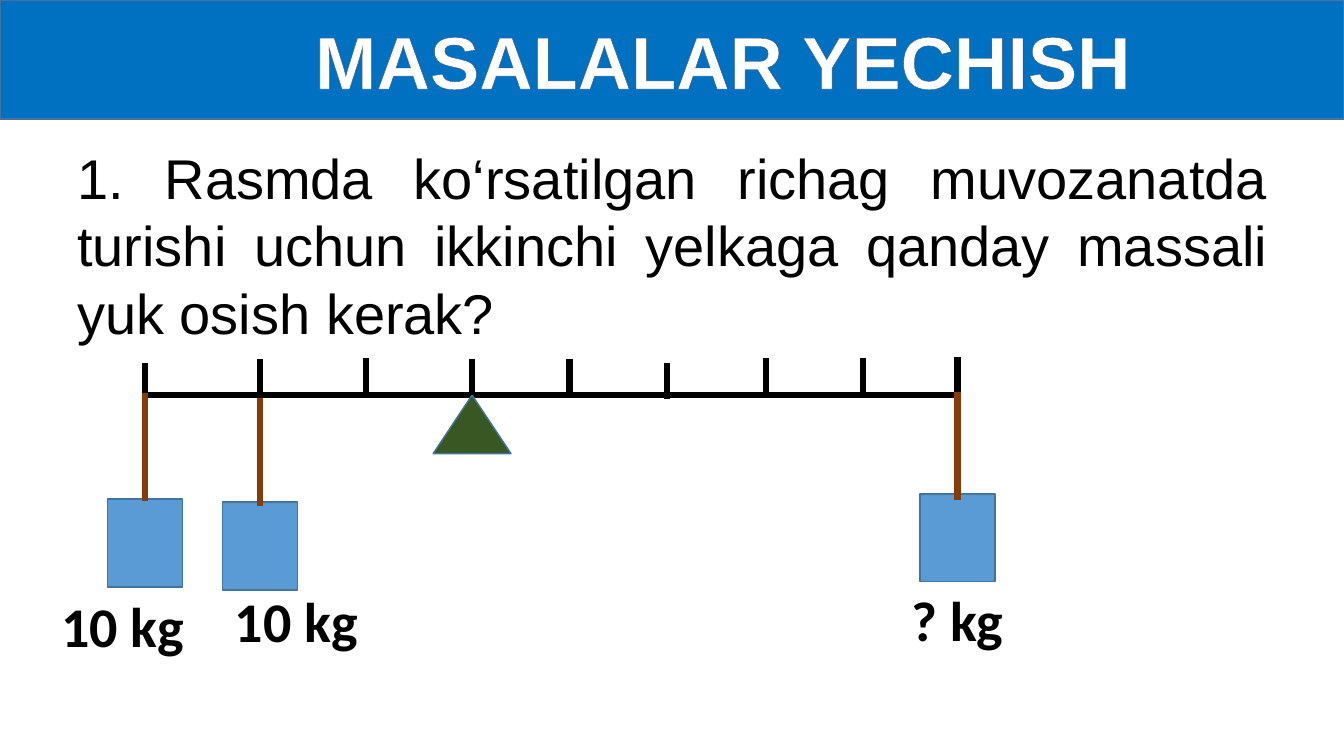
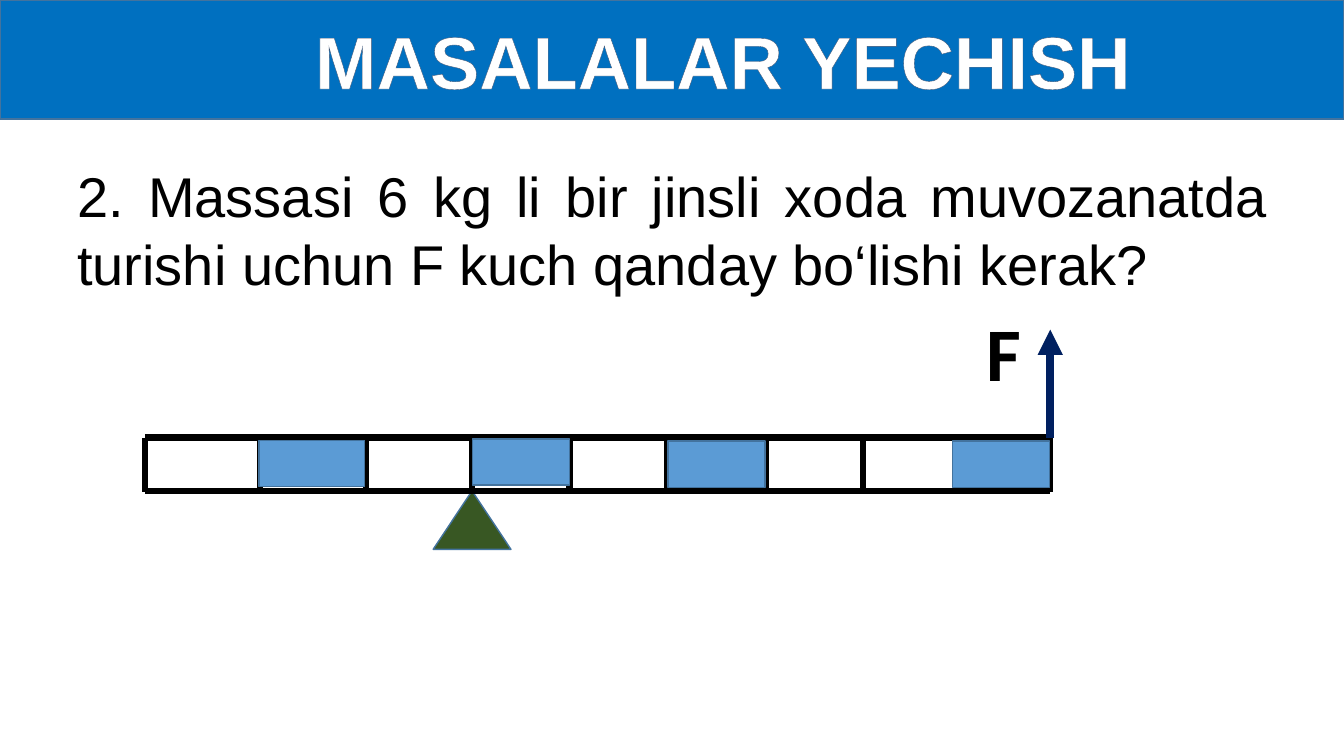
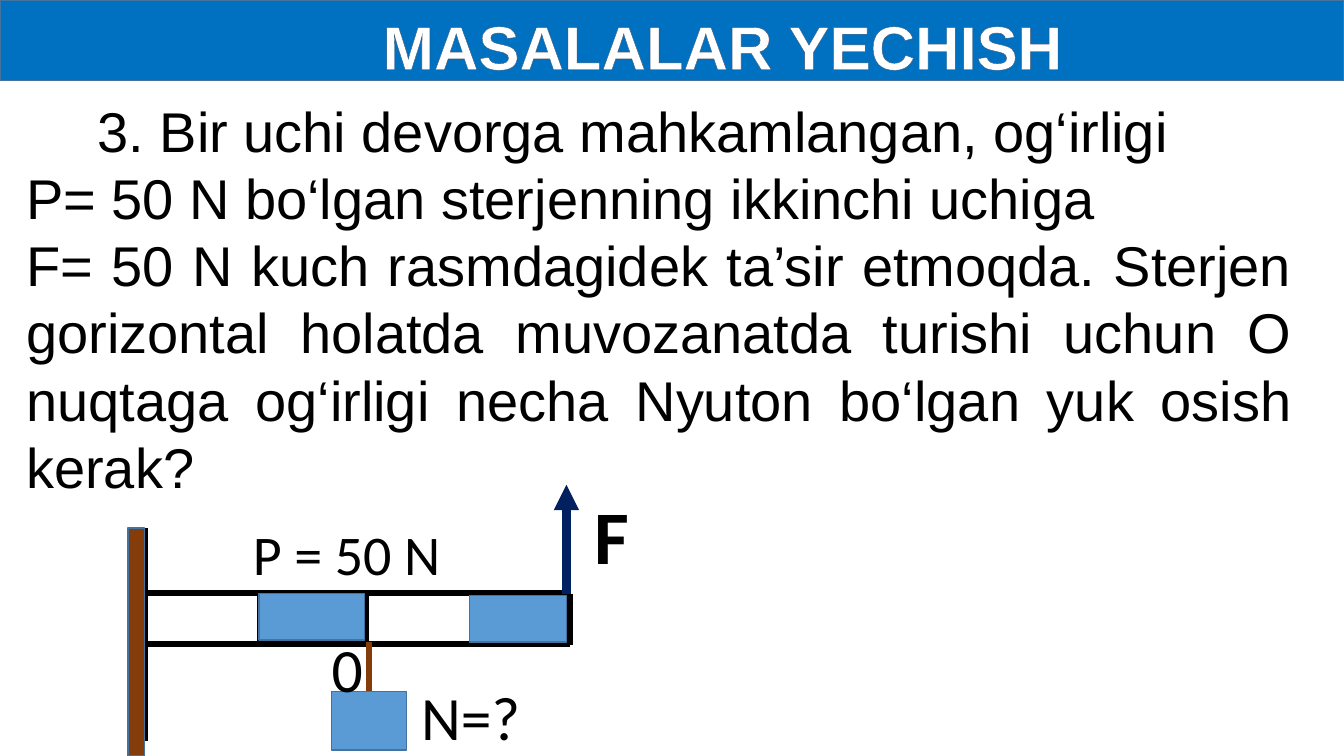
from dataclasses import dataclass

from pptx import Presentation
from pptx.dml.color import RGBColor
from pptx.enum.shapes import MSO_CONNECTOR, MSO_SHAPE
from pptx.enum.text import MSO_ANCHOR, MSO_AUTO_SIZE, PP_ALIGN
from pptx.oxml import parse_xml
from pptx.oxml.ns import nsdecls, qn
from pptx.util import Pt

CENTER, JUSTIFY, LEFT = PP_ALIGN.CENTER, PP_ALIGN.JUSTIFY, PP_ALIGN.LEFT
RECTANGLE, TRIANGLE = MSO_SHAPE.RECTANGLE, MSO_SHAPE.ISOSCELES_TRIANGLE


@dataclass(frozen=True)
class Theme:
    band: str = "0070C0"
    edge: str = "43739E"
    title: str = "FFFFFF"
    title_outline: str = "3A5274"
    ink: str = "000000"
    block: str = "5B9BD5"
    support: str = "385723"
    wood: str = "843C0B"
    force: str = "002060"
    text_font: str = "Arial"
    label_font: str = "Calibri"
    title_size: float = 52.8
    small_title_size: float = 44
    text_size: float = 40
    note_size: float = 44
    force_size: float = 54
    text_leading: float = 48
    edge_width: float = 1
    beam_width: float = 4.5
    force_width: float = 6


THEME = Theme()
WIDTH, HEIGHT = 960, 540
TITLE = "MASALALAR YECHISH"

# Problems: band height, title size, top inset, text box, paragraphs (text, alignment, indent)
PROBLEMS = [
    dict(band=85, size=THEME.title_size, insets=(3.6, 3.6), box=(48, 97.2, 864, 152.6),
         text=[("1. Rasmda ko‘rsatilgan richag muvozanatda turishi uchun ikkinchi "
                "yelkaga qanday massali yuk osish kerak?", JUSTIFY, 0)]),
    dict(band=85, size=THEME.title_size, insets=(3.6, 3.6), box=(48, 110.2, 864, 104.4),
         text=[("2. Massasi 6 kg li bir jinsli xoda muvozanatda turishi uchun F kuch "
                "qanday bo‘lishi kerak?", JUSTIFY, 0)]),
    dict(band=57.6, size=THEME.small_title_size, insets=(6.8, 0), box=(11.5, 63.4, 918, 298),
         text=[("3. Bir uchi devorga mahkamlangan, og‘irligi\v"
                "P= 50 N bo‘lgan sterjenning ikkinchi uchiga", LEFT, 51),
               ("F= 50 N kuch rasmdagidek ta’sir etmoqda. Sterjen gorizontal holatda "
                "muvozanatda turishi uchun O nuqtaga og‘irligi necha Nyuton bo‘lgan "
                "yuk osish kerak?", JUSTIFY, 0)]),
]

# Positions of the marks along the beam, and the top of each scale tick
MARKS = [103.7, 185.8, 261.4, 337, 406.8, 476.6, 547.2, 616.3, 684]
SCALE_TOPS = [259.2, 256.3, 255.6, 256.3, 256.3, 259.2, 255.6, 255.6, 254.9]
TICK_LENGTH = 25.5
ROD_END = 750.2

# Hanging loads: x, top of the cord, top of the load
LOADS = [(MARKS[0], 281, 356.4), (MARKS[1], 284.4, 358.6), (MARKS[8], 280, 352.8)]
LOAD_LABELS = [("10 kg", 31.7, 419), ("10 kg", 155.5, 415.4), ("? kg", 627.8, 414.7)]
LOAD_WIDTH, LOAD_HEIGHT = 53.5, 62.8
CORD_LENGTH = 76.8

# Coloured blocks of the rods: left, top, width
LONG_ROD_BLOCKS = [(185, 314.6, 75.6), (337.4, 313.5, 69.4),
                   (477.2, 315, 69.4), (680.3, 315, 69.4)]
SHORT_ROD_BLOCKS = [(185, 424, 75.6), (335.5, 425.5, 69.4)]
BLOCK_HEIGHT = 33.1


def rgb(value):
    return RGBColor.from_string(value)


def style_run(span, font, size, color, bold=False):
    span.font.name = font
    span.font.size = Pt(size)
    span.font.color.rgb = rgb(color)
    span.font.bold = bold


def paint(shape, fill):
    shape.fill.solid()
    shape.fill.fore_color.rgb = rgb(fill)
    shape.line.color.rgb = rgb(THEME.edge)
    shape.line.width = Pt(THEME.edge_width)


def place(shape, left, top, width, height):
    shape.left, shape.top = Pt(left), Pt(top)
    shape.width, shape.height = Pt(width), Pt(height)


def add_solid(page, kind, left, top, width, height, fill):
    shape = page.shapes.add_shape(kind, Pt(left), Pt(top), Pt(width), Pt(height))
    shape.shadow.inherit = False
    paint(shape, fill)


def add_line(page, start, end, color=THEME.ink, width=THEME.beam_width, arrow=False):
    line = page.shapes.add_connector(MSO_CONNECTOR.STRAIGHT, *map(Pt, start + end))
    line.line.color.rgb = rgb(color)
    line.line.width = Pt(width)
    properties = line.element.spPr
    if arrow:
        properties.find(qn("a:ln")).append(
            parse_xml(f'<a:tailEnd {nsdecls("a")} type="triangle"/>'))
    properties.append(parse_xml(f'<a:effectLst {nsdecls("a")}/>'))


def add_label(page, text, left, top, width, height, size, bold=False):
    box = page.shapes.add_textbox(Pt(left), Pt(top), Pt(width), Pt(height))
    box.text_frame.word_wrap = True
    box.text_frame.text = text
    para = box.text_frame.paragraphs[0]
    para.alignment = CENTER
    style_run(para.runs[0], THEME.label_font, size, THEME.ink, bold)


def add_title(page, problem):
    band = page.shapes.title
    place(band, 0, 0, WIDTH, problem["band"])
    paint(band, THEME.band)
    frame = band.text_frame
    frame.text = TITLE
    frame.auto_size = MSO_AUTO_SIZE.NONE
    frame.vertical_anchor = MSO_ANCHOR.MIDDLE
    frame.margin_left = Pt(80)
    frame.margin_top, frame.margin_bottom = map(Pt, problem["insets"])
    para = frame.paragraphs[0]
    para.alignment = CENTER
    span = para.runs[0]
    style_run(span, THEME.text_font, problem["size"], THEME.title, bold=True)
    span.font._element.insert(0, parse_xml(
        f'<a:ln {nsdecls("a")} w="{Pt(THEME.edge_width)}"><a:solidFill>'
        f'<a:srgbClr val="{THEME.title_outline}"/></a:solidFill></a:ln>'))


def add_problem_text(page, problem):
    body = page.placeholders[1]
    place(body, *problem["box"])
    frame = body.text_frame
    frame.auto_size = MSO_AUTO_SIZE.NONE
    frame.margin_top = Pt(5.4)
    frame.text = "\n".join(text for text, _, _ in problem["text"])
    for para, (_, alignment, indent) in zip(frame.paragraphs, problem["text"]):
        para.alignment = alignment
        para.line_spacing = Pt(THEME.text_leading)
        para.space_before = Pt(0)
        settings = para._p.get_or_add_pPr()
        settings.set("marL", "0")
        settings.set("indent", str(Pt(indent)))
        settings.append(parse_xml(f'<a:buNone {nsdecls("a")}/>'))
        for span in para.runs:
            style_run(span, THEME.text_font, THEME.text_size, THEME.ink)


def add_support(page, top):
    add_solid(page, TRIANGLE, 309.4, top, 55.6, 41.8, THEME.support)


def add_cord(page, x, top, bottom):
    add_line(page, (x, top), (x, bottom), THEME.wood)


def add_load(page, x, top, height):
    add_solid(page, RECTANGLE, x - LOAD_WIDTH / 2, top, LOAD_WIDTH, height, THEME.block)


def add_rod(page, ticks, end, top, bottom, blocks):
    for y in (top, bottom):
        add_line(page, (MARKS[0], y), (end, y))
    for x in ticks:
        add_line(page, (x, top + 0.7), (x, bottom + 0.7))
    for left, block_top, width in blocks:
        add_solid(page, RECTANGLE, left, block_top, width, BLOCK_HEIGHT, THEME.block)


def add_force(page, x, bottom, label_left, label_top):
    add_label(page, "F", label_left, label_top, 65.5, 72.7, THEME.force_size, bold=True)
    add_line(page, (x, bottom), (x, bottom - 77.8), THEME.force, THEME.force_width, arrow=True)


def draw_lever(page):
    beam_y = 282.2
    add_line(page, (MARKS[0], beam_y), (MARKS[-1], beam_y))
    add_support(page, beam_y)
    for x, top in zip(MARKS, SCALE_TOPS):
        add_line(page, (x, top), (x, top + TICK_LENGTH))
    for x, cord_top, load_top in LOADS:
        add_load(page, x, load_top, LOAD_HEIGHT)
        add_cord(page, x, cord_top, cord_top + CORD_LENGTH)
    for text, left, top in LOAD_LABELS:
        add_label(page, text, left, top, 112.3, 55.4, THEME.text_size, bold=True)


def draw_long_rod(page):
    add_support(page, 350.6)
    add_rod(page, MARKS[:8] + [ROD_END], ROD_END, 312.5, 350.6, LONG_ROD_BLOCKS)
    add_force(page, ROD_END, 313.2, 684, 214.6)


def draw_wall_rod(page):
    add_rod(page, [MARKS[1], MARKS[2], MARKS[4]], MARKS[4], 423.4, 460.1, SHORT_ROD_BLOCKS)
    add_force(page, 404.6, 424.1, 404.6, 345.6)
    # Wall
    add_line(page, (MARKS[0], 377.3), (MARKS[0], 529.2))
    add_solid(page, RECTANGLE, 91.6, 377.3, 11.5, HEIGHT - 377.3, THEME.wood)
    # Load at point O
    add_load(page, 263.5, 493.9, 41.8)
    add_cord(page, 263.5, 458.6, 493.9)
    add_label(page, "P = 50 N", 152.6, 367.9, 190, 55.4, THEME.text_size)
    add_label(page, "0", 215.3, 447.1, 65.5, 60.5, THEME.note_size)
    add_label(page, "N=?", 266.4, 481.7, 139.7, 60.5, THEME.note_size)


def main():
    deck = Presentation()
    deck.slide_width, deck.slide_height = Pt(WIDTH), Pt(HEIGHT)
    drawings = [draw_lever, draw_long_rod, draw_wall_rod]
    for problem, draw in zip(PROBLEMS, drawings):
        page = deck.slides.add_slide(deck.slide_layouts[1])
        add_title(page, problem)
        add_problem_text(page, problem)
        draw(page)
    deck.save("out.pptx")


if __name__ == "__main__":
    main()
